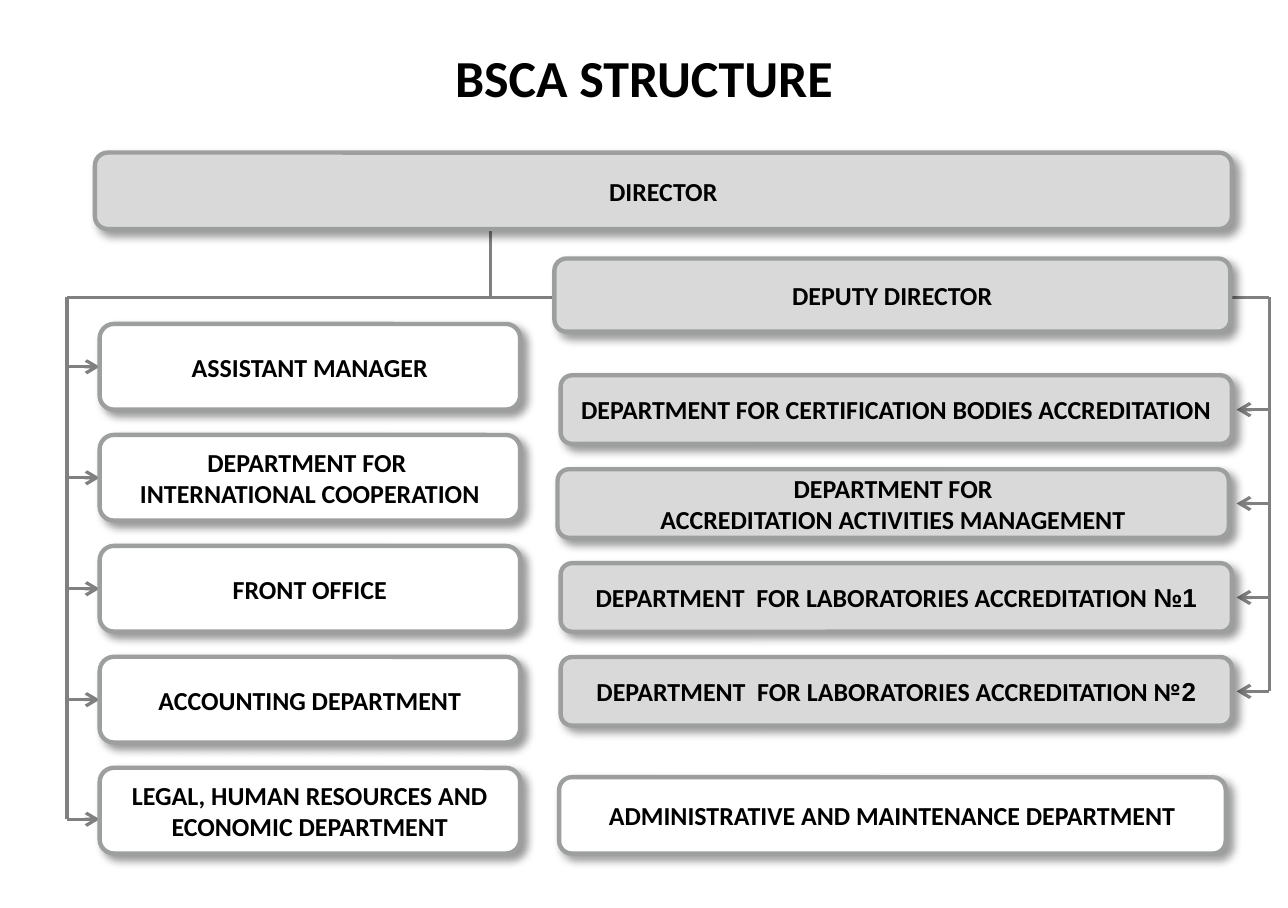
from pptx import Presentation
from pptx.dml.color import RGBColor
from pptx.enum.shapes import MSO_CONNECTOR, MSO_SHAPE
from pptx.enum.text import MSO_ANCHOR, PP_ALIGN
from pptx.oxml import parse_xml
from pptx.oxml.ns import nsdecls
from pptx.util import Inches, Pt

BLACK = RGBColor(0x00, 0x00, 0x00)
WHITE = RGBColor(0xFF, 0xFF, 0xFF)
LIGHT_GRAY = RGBColor(0xD9, 0xD9, 0xD9)
BORDER_GRAY = RGBColor(0x9D, 0x9E, 0x9E)
LINE_GRAY = RGBColor(0x80, 0x80, 0x80)

TITLE = "BSCA STRUCTURE"

# Each label is a list of (text, font) runs; "\n" is a line break.
LEFT_UNITS = [
    [("ASSISTANT MANAGER", "Calibri")],
    [("DEPARTMENT FOR \nINTERNATIONAL COOPERATION", "Calibri")],
    [("FRONT OFFICE", "Calibri")],
    [("ACCOUNTING DEPARTMENT", "Calibri")],
    [("LEGAL, HUMAN RESOURCES AND ECONOMIC DEPARTMENT", "Calibri")],
]
# (left edge, label)
DEPUTY_UNITS = [
    (3.6, [("DEPARTMENT FOR CERTIFICATION BODIES ACCREDITATION", "Calibri")]),
    (3.58, [("DEPARTMENT FOR\nACCREDITATION ACTIVITIES MANAGEMENT", "Calibri")]),
    (3.6, [("DEPARTMENT  FOR LABORATORIES ACCREDITATION ", "Calibri"), ("№1", "Arial")]),
    (3.6, [("DEPARTMENT  FOR LABORATORIES ACCREDITATION №", "Calibri"), ("2", "Arial")]),
]
# (left, top, width, height, fill, label)
SINGLE_UNITS = [
    (0.61, 0.98, 7.3, 0.49, LIGHT_GRAY, [("DIRECTOR", "Calibri")]),
    (3.56, 1.66, 4.34, 0.47, LIGHT_GRAY, [("DEPUTY DIRECTOR", "Calibri")]),
    (3.59, 4.99, 4.28, 0.49, WHITE,
     [("ADMINISTRATIVE AND MAINTENANCE DEPARTMENT", "Calibri")]),
]

LEFT_EDGE, LEFT_TOP, LEFT_PITCH, LEFT_WIDTH, LEFT_HEIGHT = 0.64, 2.08, 0.7125, 2.7, 0.55
DEPUTY_TOP, DEPUTY_PITCH, DEPUTY_WIDTH, DEPUTY_HEIGHT = 2.41, 0.603, 4.31, 0.44
LEFT_TRUNK, RIGHT_TRUNK, TRUNK_TOP = 0.43, 8.15, 1.91
LEFT_TRUNK_END = 5.26
DIRECTOR_STEM = 3.15
ARROW_LENGTH = 0.21


def add_line(slide, start, end, arrow=False):
    points = [Inches(value) for value in (*start, *end)]
    connector = slide.shapes.add_connector(MSO_CONNECTOR.STRAIGHT, *points)
    connector.line.color.rgb = LINE_GRAY
    connector.line.width = Pt(1.5)
    if arrow:
        connector.line._get_or_add_ln().append(
            parse_xml(f'<a:tailEnd {nsdecls("a")} type="arrow"/>'))
    connector._element.spPr.append(parse_xml(f'<a:effectLst {nsdecls("a")}/>'))


def add_shadow(shape):
    shape._element.spPr.append(parse_xml(
        f'<a:effectLst {nsdecls("a")}>'
        f'<a:outerShdw blurRad="{Pt(4)}" dist="{Pt(3)}" dir="2700000" algn="tl" rotWithShape="0">'
        '<a:srgbClr val="000000"><a:alpha val="40000"/></a:srgbClr>'
        '</a:outerShdw></a:effectLst>'))


def add_run(paragraph, text, font_name, size):
    run = paragraph.add_run()
    run.text = text
    run.font.name = font_name
    run.font.size = Pt(size)
    run.font.bold = True
    run.font.color.rgb = BLACK


def add_unit(slide, left, top, width, height, fill, label):
    box = [Inches(value) for value in (left, top, width, height)]
    shape = slide.shapes.add_shape(MSO_SHAPE.ROUNDED_RECTANGLE, *box)
    shape.fill.solid()
    shape.fill.fore_color.rgb = fill
    shape.line.color.rgb = BORDER_GRAY
    shape.line.width = Pt(2)
    add_shadow(shape)

    frame = shape.text_frame
    frame.word_wrap = True
    frame.vertical_anchor = MSO_ANCHOR.MIDDLE
    frame.margin_left = frame.margin_right = Inches(0.05)
    frame.margin_top = frame.margin_bottom = 0
    paragraph = frame.paragraphs[0]
    paragraph.alignment = PP_ALIGN.CENTER
    for text, font_name in label:
        for index, line in enumerate(text.split("\n")):
            if index:
                paragraph.add_line_break()
            add_run(paragraph, line, font_name, 12)


def add_title(slide):
    title = slide.shapes.title
    title.left, title.top = Inches(0), Inches(0.16)
    title.width, title.height = Inches(8.27), Inches(0.66)
    title.text_frame.vertical_anchor = MSO_ANCHOR.MIDDLE
    paragraph = title.text_frame.paragraphs[0]
    paragraph.alignment = PP_ALIGN.CENTER
    add_run(paragraph, TITLE, "Calibri", 24)


def main():
    presentation = Presentation()
    presentation.slide_width = Inches(8.27)
    presentation.slide_height = Inches(5.83)
    slide = presentation.slides.add_slide(presentation.slide_layouts[5])
    add_title(slide)

    left_tops = [LEFT_TOP + row * LEFT_PITCH for row in range(len(LEFT_UNITS))]
    deputy_tops = [DEPUTY_TOP + row * DEPUTY_PITCH for row in range(len(DEPUTY_UNITS))]
    left_arrows = [top + LEFT_HEIGHT / 2 for top in left_tops[:-1]] + [LEFT_TRUNK_END]
    right_arrows = [top + DEPUTY_HEIGHT / 2 for top in deputy_tops]

    add_line(slide, (DIRECTOR_STEM, 1.48), (DIRECTOR_STEM, TRUNK_TOP))
    for trunk, arrows, direction in ((LEFT_TRUNK, left_arrows, 1),
                                     (RIGHT_TRUNK, right_arrows, -1)):
        add_line(slide, (trunk, TRUNK_TOP), (4.24, TRUNK_TOP))
        add_line(slide, (trunk, TRUNK_TOP), (trunk, arrows[-1]))
        for y in arrows:
            add_line(slide, (trunk, y), (trunk + direction * ARROW_LENGTH, y), arrow=True)

    for unit in SINGLE_UNITS:
        add_unit(slide, *unit)
    for top, label in zip(left_tops, LEFT_UNITS):
        add_unit(slide, LEFT_EDGE, top, LEFT_WIDTH, LEFT_HEIGHT, WHITE, label)
    for top, (left, label) in zip(deputy_tops, DEPUTY_UNITS):
        add_unit(slide, left, top, DEPUTY_WIDTH, DEPUTY_HEIGHT, LIGHT_GRAY, label)

    presentation.save("out.pptx")


if __name__ == "__main__":
    main()
